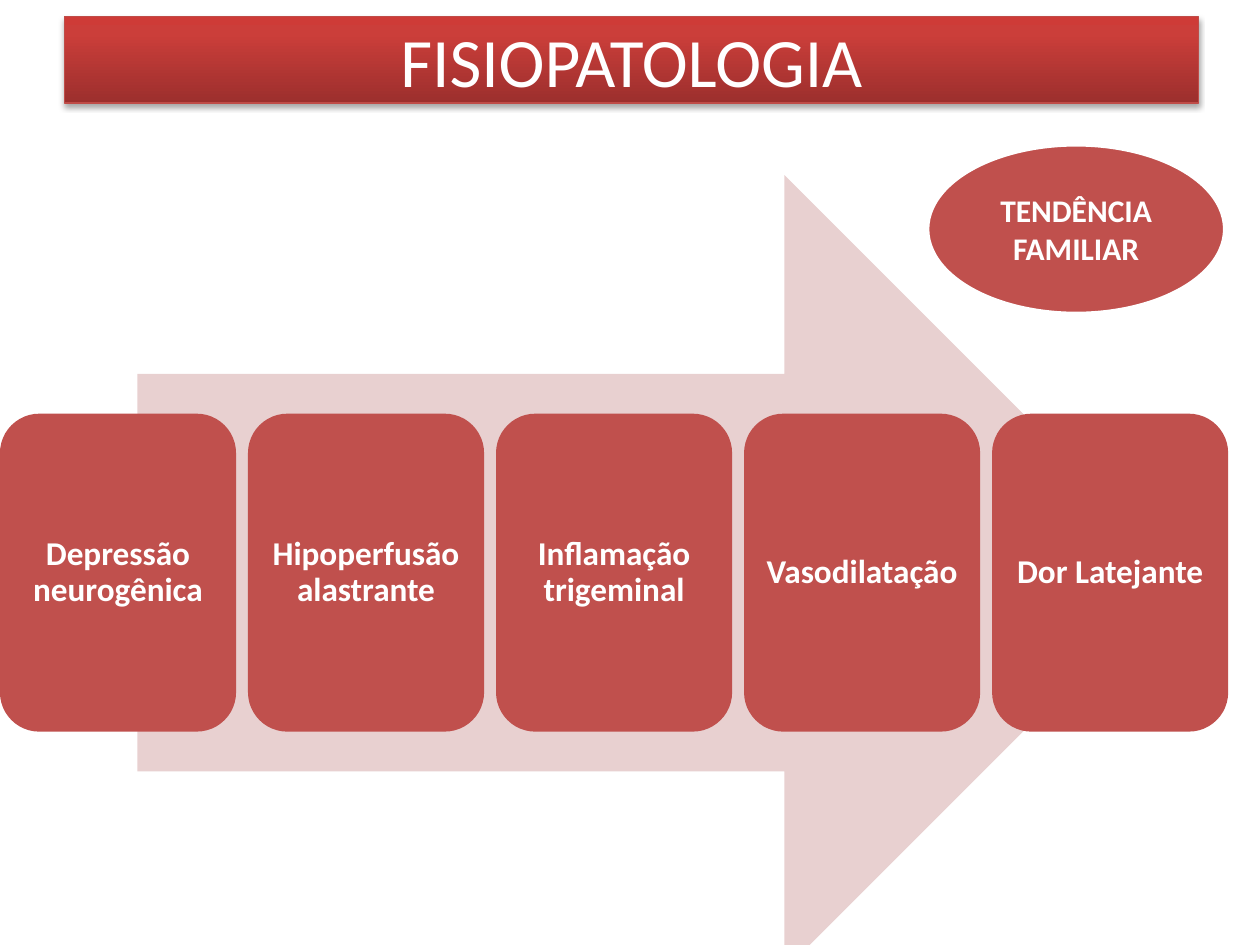
from lxml.etree import SubElement
from pptx import Presentation
from pptx.dml.color import RGBColor
from pptx.enum.shapes import MSO_SHAPE as Shape
from pptx.enum.text import MSO_ANCHOR as Anchor, MSO_AUTO_SIZE as AutoSize, PP_ALIGN as Align
from pptx.oxml.ns import qn
from pptx.util import Cm, Pt

TITLE = "FISIOPATOLOGIA"
STEPS = [
    "Depressão neurogênica",
    "Hipoperfusão alastrante",
    "Inflamação trigeminal",
    "Vasodilatação",
    "Dor Latejante",
]
FACTOR = "TENDÊNCIA FAMILIAR"

COLORS = {
    "white": "FFFFFF", "red": "C0504D", "pale": "E8D0D0", "title_line": "BF4C48",
    "title_dark": "9C2F2D", "title_mid": "CB3E3A", "title_light": "CE3B37",
    "shadow": "000000",
}
TITLE_STOPS = [(0, "title_dark"), (80, "title_mid"), (100, "title_light")]

# left, top, width, height in cm
TITLE_BOX = (1.3, 0.33, 22.86, 1.75)
ARROW_BOX = (2.77, 3.53, 21.06, 16.03)
FACTOR_BOX = (18.7, 2.92, 5.99, 3.4)
STEP_W, STEP_H, STEP_PITCH = 4.76, 6.41, 5


def rgb(name):
    return RGBColor.from_string(COLORS[name])


def add_filled(s, kind, box, color):
    sp = s.shapes.add_shape(kind, *map(Cm, box))
    sp.shadow.inherit = False
    sp.fill.solid()
    sp.fill.fore_color.rgb = rgb(color)
    sp.line.fill.background()
    return sp


def set_text(sp, text, size, bold=True, spacing=None):
    tf = sp.text_frame
    tf.text = text
    tf.word_wrap = True
    tf.auto_size = AutoSize.NONE
    tf.vertical_anchor = Anchor.MIDDLE
    p = tf.paragraphs[0]
    p.alignment = Align.CENTER
    p.line_spacing = spacing
    font = p.runs[0].font
    font.name, font.size, font.bold = "Calibri", Pt(size), bold
    font.color.rgb = rgb("white")


def add_color(parent, name):
    return SubElement(parent, qn("a:srgbClr"), val=COLORS[name])


def style_title(sp):
    """Give the title its vertical gradient, thin outline and soft shadow."""
    pr = sp.element.spPr
    grad = SubElement(pr, qn("a:gradFill"), rotWithShape="1")
    stops = SubElement(grad, qn("a:gsLst"))
    for pos, name in TITLE_STOPS:
        add_color(SubElement(stops, qn("a:gs"), pos=str(pos * 1000)), name)
    SubElement(grad, qn("a:lin"), ang=str(270 * 60000), scaled="0")
    sp.line.color.rgb = rgb("title_line")
    sp.line.width = Pt(0.75)
    effects = SubElement(pr, qn("a:effectLst"))
    shadow = SubElement(effects, qn("a:outerShdw"), blurRad=str(Pt(3.1)),
                        dist=str(Pt(1.8)), dir=str(90 * 60000), rotWithShape="0")
    SubElement(add_color(shadow, "shadow"), qn("a:alpha"), val="35000")


def main():
    prs = Presentation()
    prs.slide_width, prs.slide_height = Cm(25.4), Cm(19.05)
    s = prs.slides.add_slide(prs.slide_layouts[5])

    title = s.shapes.title
    title.left, title.top, title.width, title.height = map(Cm, TITLE_BOX)
    style_title(title)
    set_text(title, TITLE, 39.6, bold=False)

    add_filled(s, Shape.RIGHT_ARROW, ARROW_BOX, "pale")
    step_top = ARROW_BOX[1] + (ARROW_BOX[3] - STEP_H) / 2
    for i, text in enumerate(STEPS):
        box = (i * STEP_PITCH, step_top, STEP_W, STEP_H)
        sp = add_filled(s, Shape.ROUNDED_RECTANGLE, box, "red")
        set_text(sp, text, 19, spacing=0.9)
        tf = sp.text_frame
        tf.margin_left = tf.margin_right = tf.margin_top = tf.margin_bottom = Cm(0.2)

    factor = add_filled(s, Shape.OVAL, FACTOR_BOX, "red")
    factor.line.color.rgb = rgb("white")
    factor.line.width = Pt(2)
    set_text(factor, FACTOR, 18)

    prs.save("out.pptx")


if __name__ == "__main__":
    main()
